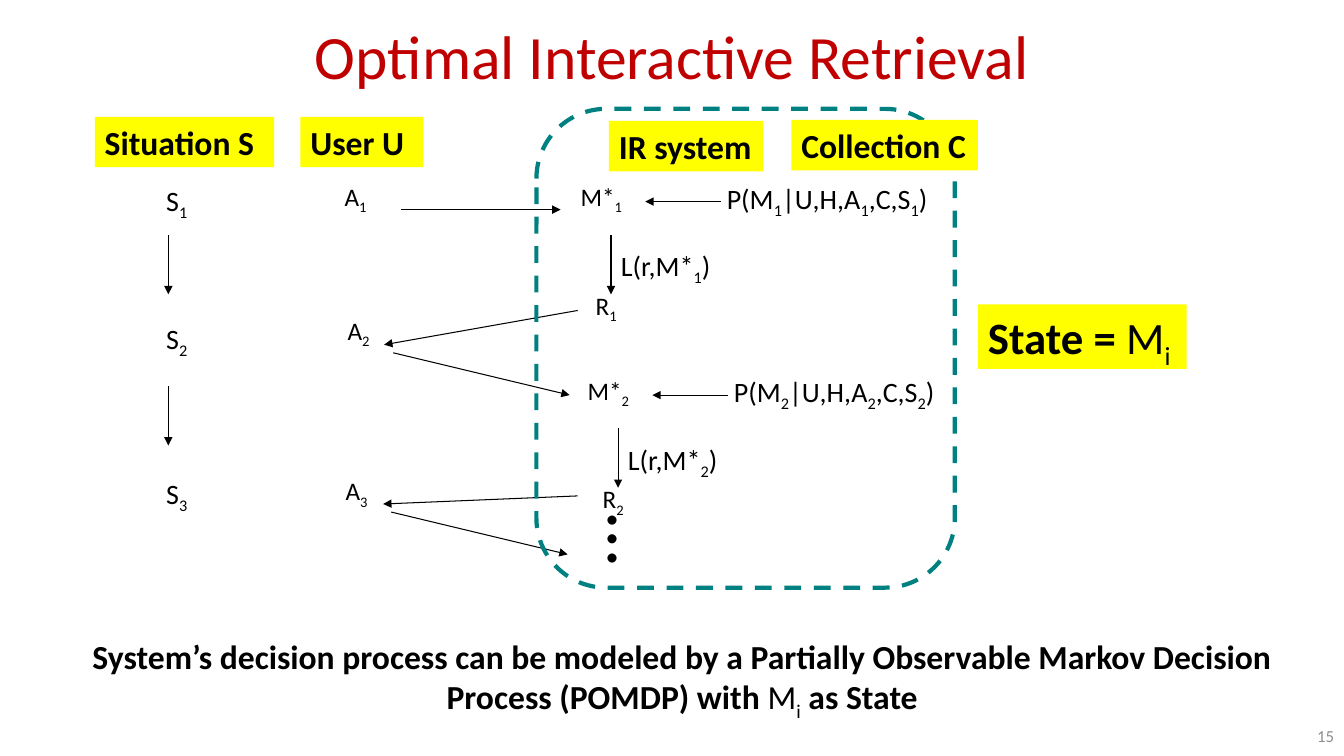
from lxml import etree
from pptx import Presentation
from pptx.dml.color import RGBColor
from pptx.enum.dml import MSO_LINE
from pptx.enum.shapes import MSO_CONNECTOR, MSO_SHAPE
from pptx.enum.text import MSO_ANCHOR, MSO_AUTO_SIZE, PP_ALIGN
from pptx.oxml.ns import qn
from pptx.util import Pt

PX = 9144  # one hundredth of an inch
LEFT, CENTER, RIGHT = PP_ALIGN.LEFT, PP_ALIGN.CENTER, PP_ALIGN.RIGHT
TOP, MIDDLE = MSO_ANCHOR.TOP, MSO_ANCHOR.MIDDLE
GROW, FIXED = MSO_AUTO_SIZE.SHAPE_TO_FIT_TEXT, MSO_AUTO_SIZE.NONE
RECT, FRAME = MSO_SHAPE.RECTANGLE, MSO_SHAPE.FLOWCHART_ALTERNATE_PROCESS
STRAIGHT, DASH = MSO_CONNECTOR.STRAIGHT, MSO_LINE.DASH
BLACK, RED, GRAY = "000000", "C00000", "8C8C8C"
YELLOW, TEAL = "FFFF00", "008080"


def px(*sizes):
    return [size * PX for size in sizes]


def rgb(code):
    return RGBColor.from_string(code)


class Board:
    def __init__(self, slide):
        self.shapes = slide.shapes
        self.face = "Calibri"

    def fill(self, shape, text, size, color=BLACK, bold=False, align=LEFT,
             anchor=TOP, wrap=False, fit=GROW):
        """Put text in a shape; "_" lowers the next character, "~" toggles bold."""
        frame = shape.text_frame
        layout = {"word_wrap": wrap, "auto_size": fit, "vertical_anchor": anchor}
        for name, value in layout.items():
            setattr(frame, name, value)
        para = frame.paragraphs[0]
        para.alignment = align
        for part in text.split("~"):
            head, *rest = part.split("_")
            self.piece(para, head, size, color, bold)
            for tail in rest:
                self.piece(para, tail[0], size, color, bold, sub=True)
                self.piece(para, tail[1:], size, color, bold)
            bold = not bold

    def piece(self, para, text, size, color, bold, sub=False):
        if not text:
            return
        run = para.add_run()
        run.text = text
        font = {"name": self.face, "size": Pt(size), "bold": bold}
        for name, value in font.items():
            setattr(run.font, name, value)
        run.font.color.rgb = rgb(color)
        if sub:
            run._r.get_or_add_rPr().set("baseline", "-25000")

    def text(self, x, y, w, h, text, size, **style):
        box = self.shapes.add_textbox(*px(x, y, w, h))
        self.fill(box, text, size, **style)
        return box

    def label(self, x, y, w, h, text, size=24, wrap=False):
        shape = self.shapes.add_shape(RECT, *px(x, y, w, h))
        shape.shadow.inherit = False
        shape.fill.solid()
        shape.fill.fore_color.rgb = rgb(YELLOW)
        shape.line.fill.background()
        self.fill(shape, text, size, bold=True, wrap=wrap)

    def frame(self, x, y, w, h):
        shape = self.shapes.add_shape(FRAME, *px(x, y, w, h))
        shape.shadow.inherit = False
        shape.fill.background()
        shape.line.color.rgb = rgb(TEAL)
        for name, value in {"width": Pt(3), "dash_style": DASH}.items():
            setattr(shape.line, name, value)

    def arrow(self, x1, y1, x2, y2):
        line = self.shapes.add_connector(STRAIGHT, *px(x1, y1, x2, y2))
        line.line.color.rgb = rgb(BLACK)
        line.line.width = Pt(0.75)
        etree.SubElement(line.get_or_add_ln(), qn("a:tailEnd"), type="triangle")
        etree.SubElement(line.element.spPr, qn("a:effectLst"))


def main():
    deck = Presentation()
    deck.slide_width, deck.slide_height = px(1333, 750)
    board = Board(deck.slides.add_slide(deck.slide_layouts[6]))

    board.text(0, 0, 1333, 108, "Optimal Interactive Retrieval", 44, color=RED,
               align=CENTER, anchor=MIDDLE, wrap=True, fit=FIXED)

    # System side: each round repeats lower and slightly to the right
    for turn in range(2):
        n, dx, dy = turn + 1, 7 * turn, 192 * turn
        board.text(566 + dx, 175 + dy, 63, 40, f"M*_{n}", 18)
        board.arrow(715 + dx, 200 + dy, 640 + dx, 200 + dy)
        board.text(711 + dx, 175 + dy, 225, 44, f"P(M_{n}|U,H,A_{n},C,S_{n})", 20)
        board.text(606 + dx, 242 + dy, 111, 44, f"L(r,M*_{n})", 20)
        board.arrow(606 + dx, 233 + dy, 606 + dx, 292 + dy)
        board.text(581 + dx, 283 + dy, 43, 40, f"R_{n}", 18)
    dots = board.text(572, 500, 111, 62, "…", 54)
    dots.element.txBody.bodyPr.set("vert", "eaVert")

    # Situations and user actions
    for n, (top, x, y) in enumerate([(177, 332, 175), (314, 335, 308),
                                     (468, 333, 467)], 1):
        board.text(155, top, 43, 44, f"S_{n}", 20)
        board.text(x, y, 43, 40, f"A_{n}", 18)
    for y in (233, 383):
        board.arrow(167, y, 167, y + 59)

    # Exchanges between user and system
    for ends in [(398, 208, 556, 208), (573, 308, 381, 342), (390, 350, 565, 392),
                 (573, 492, 380, 500), (388, 508, 563, 550)]:
        board.arrow(*ends)

    board.frame(532, 108, 415, 475)
    for x, y, w, name in [(94, 116, 178, "Situation S"), (298, 116, 122, "User U"),
                          (604, 120, 153, "IR system"), (785, 119, 185, "Collection C")]:
        board.label(x, y, w, 50, name)
    board.label(970, 302, 207, 64, "State = ~M_i", 32, wrap=True)

    board.text(62, 626, 1229, 91,
               "System’s decision process can be modeled by a Partially Observable "
               "Markov Decision Process (POMDP) with ~M_i~ as State",
               24, bold=True, align=CENTER, wrap=True)
    board.text(1022, 710, 311, 40, "15", 12, color=GRAY, align=RIGHT,
               anchor=MIDDLE, wrap=True, fit=FIXED)
    deck.save("out.pptx")


if __name__ == "__main__":
    main()
